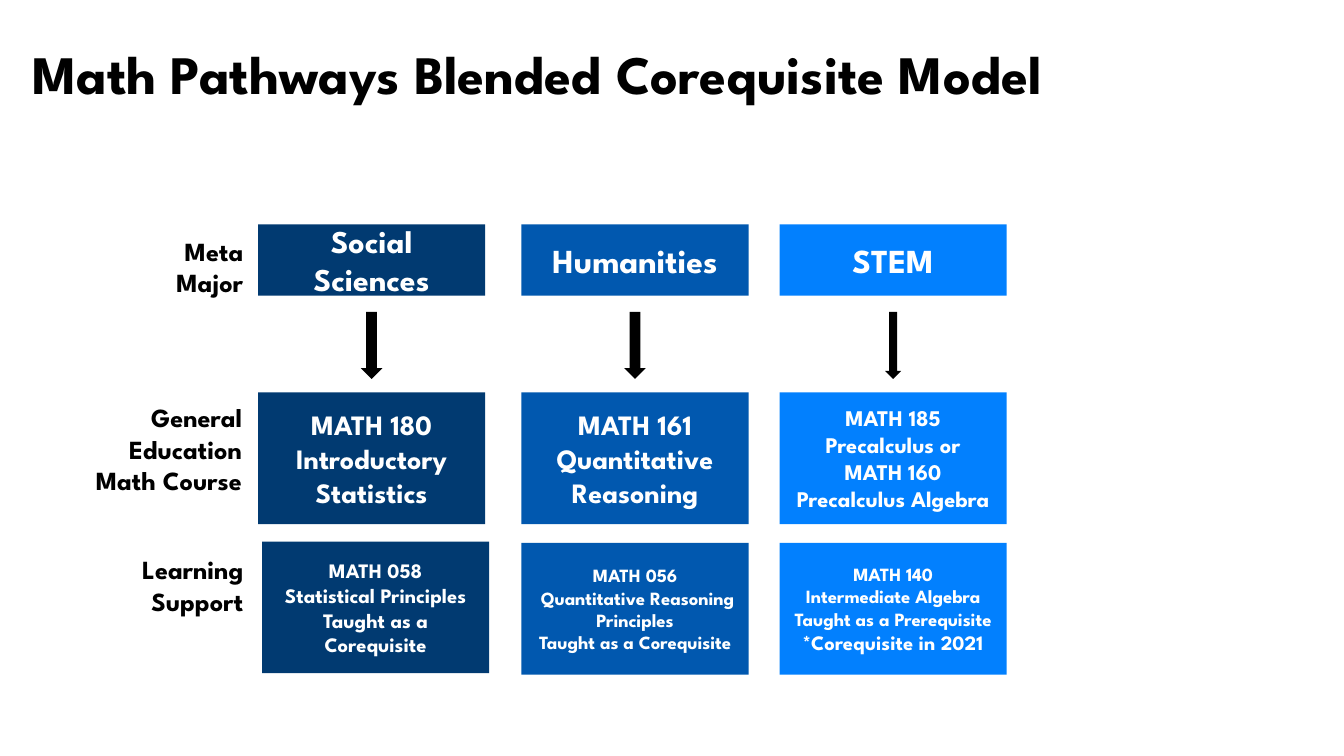
import pptx
import pptx.dml.color
import pptx.enum.shapes
import pptx.enum.text
import pptx.util

Inches = pptx.util.Inches
Align = pptx.enum.text.PP_ALIGN
Anchor = pptx.enum.text.MSO_ANCHOR
Shape = pptx.enum.shapes.MSO_SHAPE

FONT = "League Spartan"
BLACK, WHITE = "000000", "FFFFFF"
CARD_WIDTH = 1.69
MAJOR_TOP, ARROW_TOP, COURSE_TOP, SUPPORT_TOP = 1.67, 2.32, 2.92, 4.04
MAJOR_HEIGHT, ARROW_HEIGHT, CARD_HEIGHT = 0.53, 0.5, 0.98

PATHWAYS = [
    {"left": 1.92, "color": "013A71", "arrow_width": 0.16, "support_shift": (0.03, -0.01),
     "major": [("Social Sciences", 17)],
     "course": [("MATH 180", 15), ("Introductory Statistics", 15)],
     "support": [("MATH 058", 11), ("Statistical Principles", 11),
                 ("Taught as a Corequisite", 11)]},
    {"left": 3.88, "color": "0158AF", "arrow_width": 0.16, "support_shift": (0, 0),
     "major": [("Humanities", 18)],
     "course": [("MATH 161\nQuantitative Reasoning", 15)],
     "support": [("MATH 056", 10), (" Quantitative Reasoning Principles", 10),
                 ("Taught as a Corequisite", 10)]},
    {"left": 5.8, "color": "0280FE", "arrow_width": 0.12, "support_shift": (0, 0),
     "major": [("STEM", 18)],
     "course": [("MATH 185", 12), ("Precalculus or", 12), ("MATH 160", 12),
                ("Precalculus Algebra", 12)],
     "support": [("MATH 140", 10), ("Intermediate Algebra", 10),
                 ("Taught as a Prerequisite", 10), ("*Corequisite in 2021", 11)]},
]

ROW_LABELS = [
    ((0.84, 1.7, 1.07, 0.43), [("Meta Major", 14)]),
    ((0.35, 2.94, 1.55, 0.61), [("General Education", 14), ("Math Course", 14)]),
    ((0.32, 4.07, 1.59, 0.25), [("Learning Support", 14)]),
]


def rgb(color):
    """Return the colour object for a hex string."""
    return pptx.dml.color.RGBColor.from_string(color)


def set_values(target, values):
    """Set each attribute in values on target."""
    for name, value in values.items():
        setattr(target, name, value)


def write_lines(frame, lines, color, align, anchor, line_spacing=1.0):
    """Write (wording, size) lines as bold paragraphs, with a line break at each newline."""
    set_values(frame, {
        "word_wrap": True, "auto_size": pptx.enum.text.MSO_AUTO_SIZE.NONE,
        "vertical_anchor": anchor,
        "margin_left": Inches(0.1), "margin_right": Inches(0.1),
        "margin_top": Inches(0.05), "margin_bottom": Inches(0.05)})
    for index, (wording, size) in enumerate(lines):
        paragraph = frame.add_paragraph() if index else frame.paragraphs[0]
        set_values(paragraph, {"alignment": align, "line_spacing": line_spacing})
        for part_index, part in enumerate(wording.split("\n")):
            if part_index:
                paragraph.add_line_break()
            run = paragraph.add_run()
            run.text = part
            set_values(run.font, {"name": FONT, "size": pptx.util.Pt(size), "bold": True})
            run.font.color.rgb = rgb(color)


def add_block(slide, preset, box, color):
    """Add a flat filled shape without outline or shadow."""
    block = slide.shapes.add_shape(preset, *map(Inches, box))
    block.shadow.inherit = False
    block.fill.solid()
    block.fill.fore_color.rgb = rgb(color)
    block.line.fill.background()
    return block


def add_card(slide, box, color, lines):
    """Add a coloured card with centred white lines."""
    card = add_block(slide, Shape.RECTANGLE, box, color)
    write_lines(card.text_frame, lines, WHITE, Align.CENTER, Anchor.MIDDLE)


def add_pathway(slide, pathway):
    """Add one column: meta major, arrow, course and learning support."""
    left, color, arrow_width = pathway["left"], pathway["color"], pathway["arrow_width"]
    shift_x, shift_y = pathway["support_shift"]
    add_card(slide, (left, MAJOR_TOP, CARD_WIDTH, MAJOR_HEIGHT), color, pathway["major"])
    add_card(slide, (left, COURSE_TOP, CARD_WIDTH, CARD_HEIGHT), color, pathway["course"])
    add_card(slide, (left + shift_x, SUPPORT_TOP + shift_y, CARD_WIDTH, CARD_HEIGHT),
             color, pathway["support"])
    arrow_left = left + (CARD_WIDTH - arrow_width) / 2
    add_block(slide, Shape.DOWN_ARROW,
              (arrow_left, ARROW_TOP, arrow_width, ARROW_HEIGHT), BLACK)


def add_row_label(slide, box, lines):
    """Add a right-aligned label beside a row of cards."""
    label = slide.shapes.add_textbox(*map(Inches, box))
    write_lines(label.text_frame, lines, BLACK, Align.RIGHT, Anchor.TOP)


def place_title(slide, box, wording):
    """Move the title placeholder to box and write the title."""
    title = slide.shapes.title
    set_values(title, dict(zip(("left", "top", "width", "height"), map(Inches, box))))
    write_lines(title.text_frame, [(wording, 29)], BLACK, Align.LEFT, Anchor.MIDDLE, 0.9)
    title.text_frame.margin_bottom = Inches(0.22)


def main():
    """Build and save the math pathways slide."""
    deck = pptx.Presentation()
    set_values(deck, {"slide_width": Inches(10), "slide_height": Inches(10) * 9 // 16})
    slide = deck.slides.add_slide(deck.slide_layouts[5])
    place_title(slide, (0.14, 0.22, 8.62, 0.88), "Math Pathways Blended Corequisite Model")
    for pathway in PATHWAYS:
        add_pathway(slide, pathway)
    for box, lines in ROW_LABELS:
        add_row_label(slide, box, lines)
    deck.save("out.pptx")


if __name__ == "__main__":
    main()
